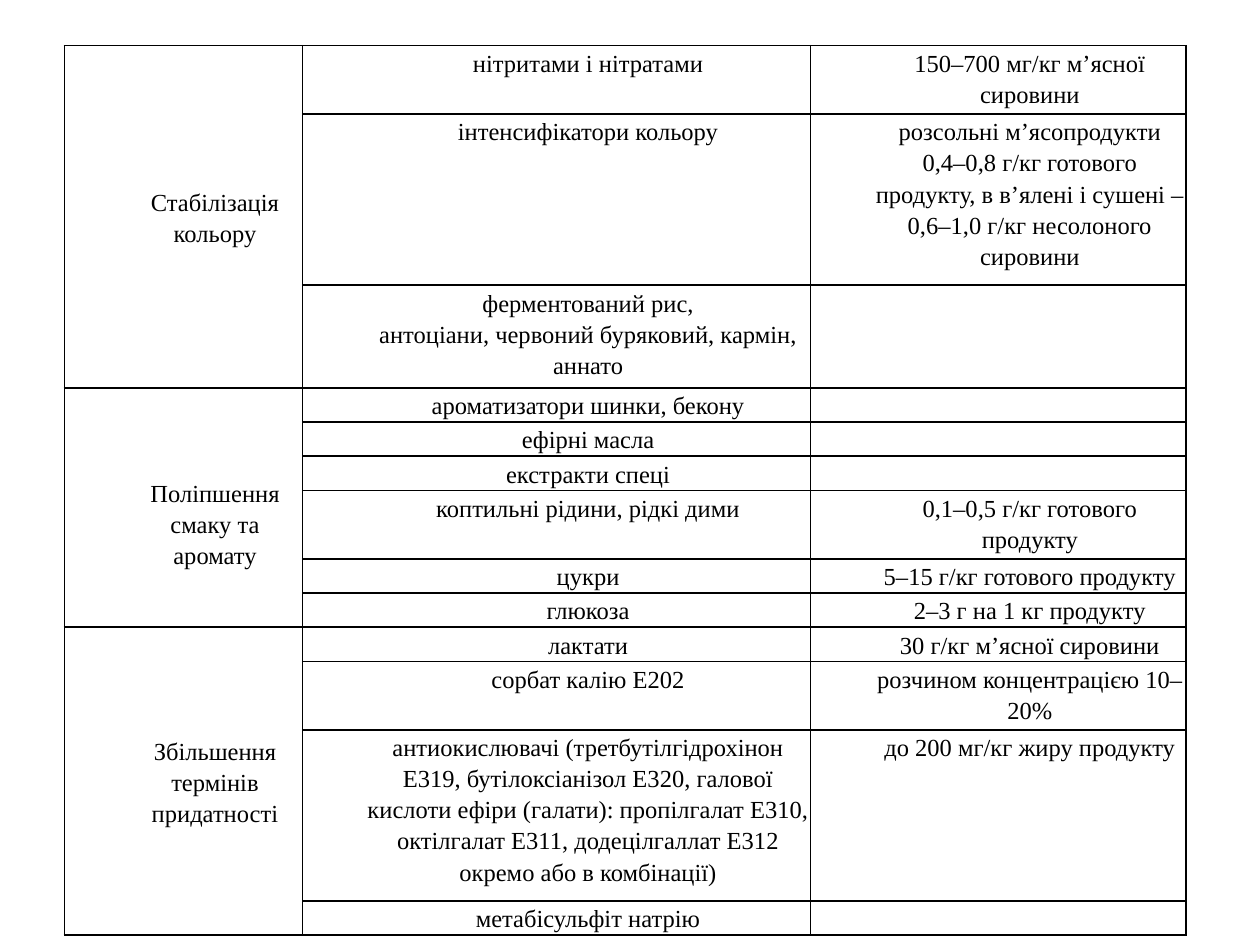
from dataclasses import dataclass

from lxml import etree
from pptx import Presentation
from pptx.dml.color import RGBColor
from pptx.enum.text import MSO_ANCHOR, PP_ALIGN
from pptx.oxml.ns import qn
from pptx.util import Cm, Pt

CENTER = PP_ALIGN.CENTER
TOP, MIDDLE = MSO_ANCHOR.TOP, MSO_ANCHOR.MIDDLE


@dataclass(frozen=True)
class Theme:
    """Colours, type and line sizes of the slide."""
    font: str = "Times New Roman"
    size: float = 14
    text: str = "000000"
    fill: str = "FFFFFF"
    border: str = "000000"
    border_width: float = 1
    line_spacing: float = 1.15


THEME = Theme()
TABLE_BOX = (1.3, 0.92)
COLUMN_WIDTHS = (4.8, 10.24, 7.57)
LINE_HEIGHT = 0.69
INDENT = 1.27
CELL_MARGIN = 0.02
LOWERED_MARGIN = 0.62

GROUPS = [
    ("Стабілізація кольору", 0, [
        (2, "нітритами і нітратами", "150–700 мг/кг м’ясної сировини"),
        (5, "інтенсифікатори кольору",
         "розсольні м’ясопродукти 0,4–0,8 г/кг готового продукту, "
         "в в’ялені і сушені – 0,6–1,0 г/кг несолоного сировини"),
        (3, "ферментований рис,\nантоціани, червоний буряковий, кармін, аннато", ""),
    ]),
    ("Поліпшення смаку та аромату", LOWERED_MARGIN, [
        (1, "ароматизатори шинки, бекону", ""),
        (1, "ефірні масла", ""),
        (1, "екстракти спеці", ""),
        (2, "коптильні рідини, рідкі дими", "0,1–0,5 г/кг готового продукту"),
        (1, "цукри", "5–15 г/кг готового продукту"),
        (1, "глюкоза", "2–3 г на 1 кг продукту"),
    ]),
    ("Збільшення термінів придатності", 0, [
        (1, "лактати", "30 г/кг м’ясної сировини"),
        (2, "сорбат калію Е202", "розчином концентрацією 10–20%"),
        (5, "антиокислювачі (третбутілгідрохінон Е319, бутілоксіанізол Е320, "
            "галової кислоти ефіри (галати): пропілгалат Е310, октілгалат Е311, "
            "додецілгаллат Е312\nокремо або в комбінації)",
         "до 200 мг/кг жиру продукту"),
        (1, "метабісульфіт натрію", ""),
    ]),
]


def add_borders(cell):
    """Draw a thin line on all four sides of a cell."""
    properties = cell._tc.get_or_add_tcPr()
    for position, side in enumerate(("lnL", "lnR", "lnT", "lnB")):
        line = etree.Element(qn(f"a:{side}"), w=str(Pt(THEME.border_width)))
        fill = etree.SubElement(line, qn("a:solidFill"))
        etree.SubElement(fill, qn("a:srgbClr"), val=THEME.border)
        properties.insert(position, line)


def write_paragraph(paragraph, text):
    """Write one centred, indented paragraph, or size an empty one."""
    paragraph.alignment = CENTER
    paragraph.line_spacing = THEME.line_spacing
    paragraph._p.get_or_add_pPr().set("marL", str(Cm(INDENT)))
    if text:
        run = paragraph.add_run()
        run.text = text
        run.font.name = THEME.font
        run.font.size = Pt(THEME.size)
        run.font.color.rgb = RGBColor.from_string(THEME.text)
    else:
        etree.SubElement(paragraph._p, qn("a:endParaRPr"), sz=str(int(THEME.size * 100)))


def format_cell(cell, text="", anchor=TOP, margin_top=CELL_MARGIN):
    """Give a cell its fill, borders, margins and text."""
    cell.fill.solid()
    cell.fill.fore_color.rgb = RGBColor.from_string(THEME.fill)
    add_borders(cell)
    cell.margin_left = cell.margin_right = Cm(CELL_MARGIN)
    cell.margin_top, cell.margin_bottom = Cm(margin_top), 0
    cell.vertical_anchor = anchor
    frame = cell.text_frame
    for index, line in enumerate(text.split("\n")):
        paragraph = frame.add_paragraph() if index else frame.paragraphs[0]
        write_paragraph(paragraph, line)


def add_additives_table(slide, left, top):
    """Add the table of additives, grouped by purpose, at the given corner."""
    line_counts = [lines for _, _, rows in GROUPS for lines, _, _ in rows]
    table = slide.shapes.add_table(
        len(line_counts), len(COLUMN_WIDTHS), Cm(left), Cm(top),
        Cm(sum(COLUMN_WIDTHS)), Cm(LINE_HEIGHT * sum(line_counts))).table
    table.first_row = table.horz_banding = False
    for column, width in zip(table.columns, COLUMN_WIDTHS):
        column.width = Cm(width)
    for row, lines in zip(table.rows, line_counts):
        row.height = Cm(LINE_HEIGHT * lines)

    first = 0
    for purpose, margin_top, rows in GROUPS:
        for offset, (_, additive, dose) in enumerate(rows):
            row = first + offset
            if offset:
                format_cell(table.cell(row, 0))
            else:
                format_cell(table.cell(row, 0), purpose, MIDDLE, margin_top)
            format_cell(table.cell(row, 1), additive)
            format_cell(table.cell(row, 2), dose)
        table.cell(first, 0).merge(table.cell(first + len(rows) - 1, 0))
        first += len(rows)


def main():
    """Build the slide and save it."""
    presentation = Presentation()
    presentation.slide_width, presentation.slide_height = Cm(25.4), Cm(19.05)
    slide = presentation.slides.add_slide(presentation.slide_layouts.get_by_name("Blank"))
    add_additives_table(slide, *TABLE_BOX)
    presentation.save("out.pptx")


if __name__ == "__main__":
    main()
